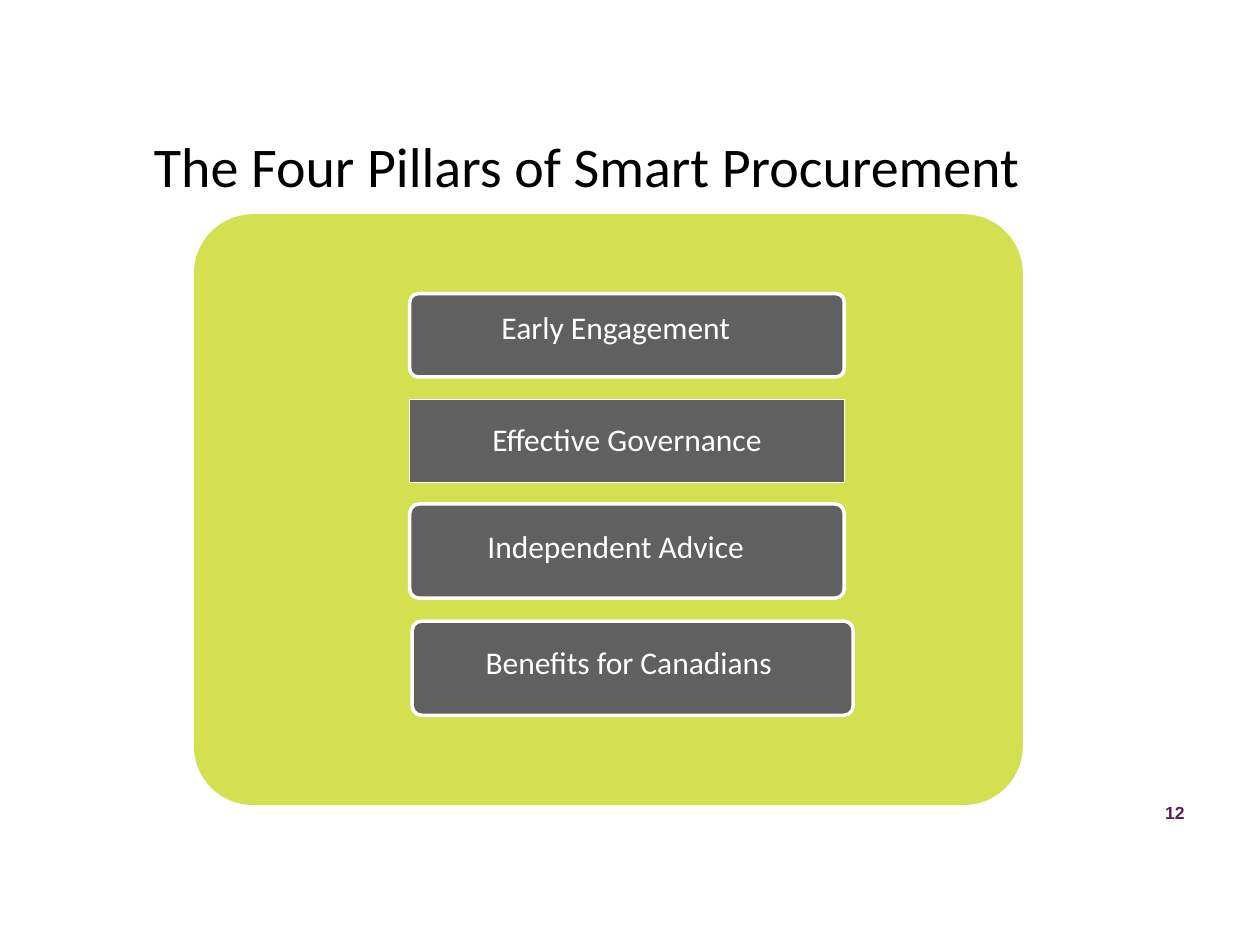
from dataclasses import dataclass
from typing import Optional

from pptx import Presentation
from pptx.dml.color import RGBColor
from pptx.enum.shapes import MSO_SHAPE
from pptx.enum.text import MSO_ANCHOR, PP_ALIGN
from pptx.util import Cm, Pt

BLACK = RGBColor(0x00, 0x00, 0x00)
WHITE = RGBColor(0xFF, 0xFF, 0xFF)
LIME = RGBColor(0xD3, 0xE1, 0x51)
GREY = RGBColor(0x60, 0x60, 0x60)
PLUM = RGBColor(0x5B, 0x1A, 0x51)


@dataclass(frozen=True)
class Frame:
    left: float
    top: float
    width: float
    height: float

    def lengths(self) -> tuple:
        return Cm(self.left), Cm(self.top), Cm(self.width), Cm(self.height)


@dataclass(frozen=True)
class Pillar:
    text: str
    box: Frame
    label: Optional[Frame] = None
    preset: MSO_SHAPE = MSO_SHAPE.ROUNDED_RECTANGLE
    line_width: float = 2


PANEL = Frame(3.91, 4.32, 16.71, 11.91)
TITLE = Frame(2.49, 2.51, 18.69, 1.63)
PAGE_NUMBER = Frame(23.19, 16.08, 0.99, 0.61)
PILLARS = [
    Pillar("Early Engagement", Frame(8.26, 5.92, 8.76, 1.68), Frame(8.26, 5.92, 8.31, 1.42)),
    Pillar("Effective Governance", Frame(8.26, 8.05, 8.76, 1.68),
           preset=MSO_SHAPE.RECTANGLE, line_width=0.75),
    Pillar("Independent Advice", Frame(8.26, 10.16, 8.76, 1.9), Frame(8.26, 10.16, 8.31, 1.8)),
    Pillar("Benefits for Canadians", Frame(8.31, 12.52, 8.89, 1.9), Frame(8.46, 12.5, 8.43, 1.8)),
]


def write_text(shape, text: str, *, size: float, color: RGBColor, font: str = "Calibri",
               bold: bool = False, line_spacing: float = 1.0,
               inset_x: float = 0.08, inset_y: float = 0.05) -> None:
    text_frame = shape.text_frame
    text_frame.word_wrap = True
    text_frame.vertical_anchor = MSO_ANCHOR.MIDDLE
    text_frame.margin_left = text_frame.margin_right = Cm(inset_x)
    text_frame.margin_top = text_frame.margin_bottom = Cm(inset_y)
    para = text_frame.paragraphs[0]
    para.alignment = PP_ALIGN.CENTER
    para.line_spacing = line_spacing
    span = para.add_run()
    span.text = text
    span.font.name = font
    span.font.size = Pt(size)
    span.font.bold = bold
    span.font.color.rgb = color


def draw_box(page, frame: Frame, preset: MSO_SHAPE, fill: RGBColor,
             line_width: Optional[float] = None):
    box = page.shapes.add_shape(preset, *frame.lengths())
    box.shadow.inherit = False
    if preset == MSO_SHAPE.ROUNDED_RECTANGLE:
        box.adjustments[0] = 0.1
    box.fill.solid()
    box.fill.fore_color.rgb = fill
    if line_width is None:
        box.line.fill.background()
    else:
        box.line.color.rgb = WHITE
        box.line.width = Pt(line_width)
    return box


def draw_pillar(page, pillar: Pillar) -> None:
    holder = draw_box(page, pillar.box, pillar.preset, GREY, pillar.line_width)
    if pillar.label:
        holder = page.shapes.add_textbox(*pillar.label.lengths())
    write_text(holder, pillar.text, size=18, color=WHITE, line_spacing=0.9)


def main() -> None:
    deck = Presentation()
    deck.slide_width, deck.slide_height = Cm(25.4), Cm(19.05)
    page = deck.slides.add_slide(deck.slide_layouts.get_by_name("Title Only"))

    title = page.shapes.title
    title.left, title.top, title.width, title.height = TITLE.lengths()
    write_text(title, "The Four Pillars of Smart Procurement", size=32, color=BLACK,
               inset_x=0.25, inset_y=0.13)

    draw_box(page, PANEL, MSO_SHAPE.ROUNDED_RECTANGLE, LIME)
    for pillar in PILLARS:
        draw_pillar(page, pillar)

    number = page.shapes.add_textbox(*PAGE_NUMBER.lengths())
    write_text(number, "12", size=10, color=PLUM, font="Arial", bold=True)
    deck.save("out.pptx")


if __name__ == "__main__":
    main()
